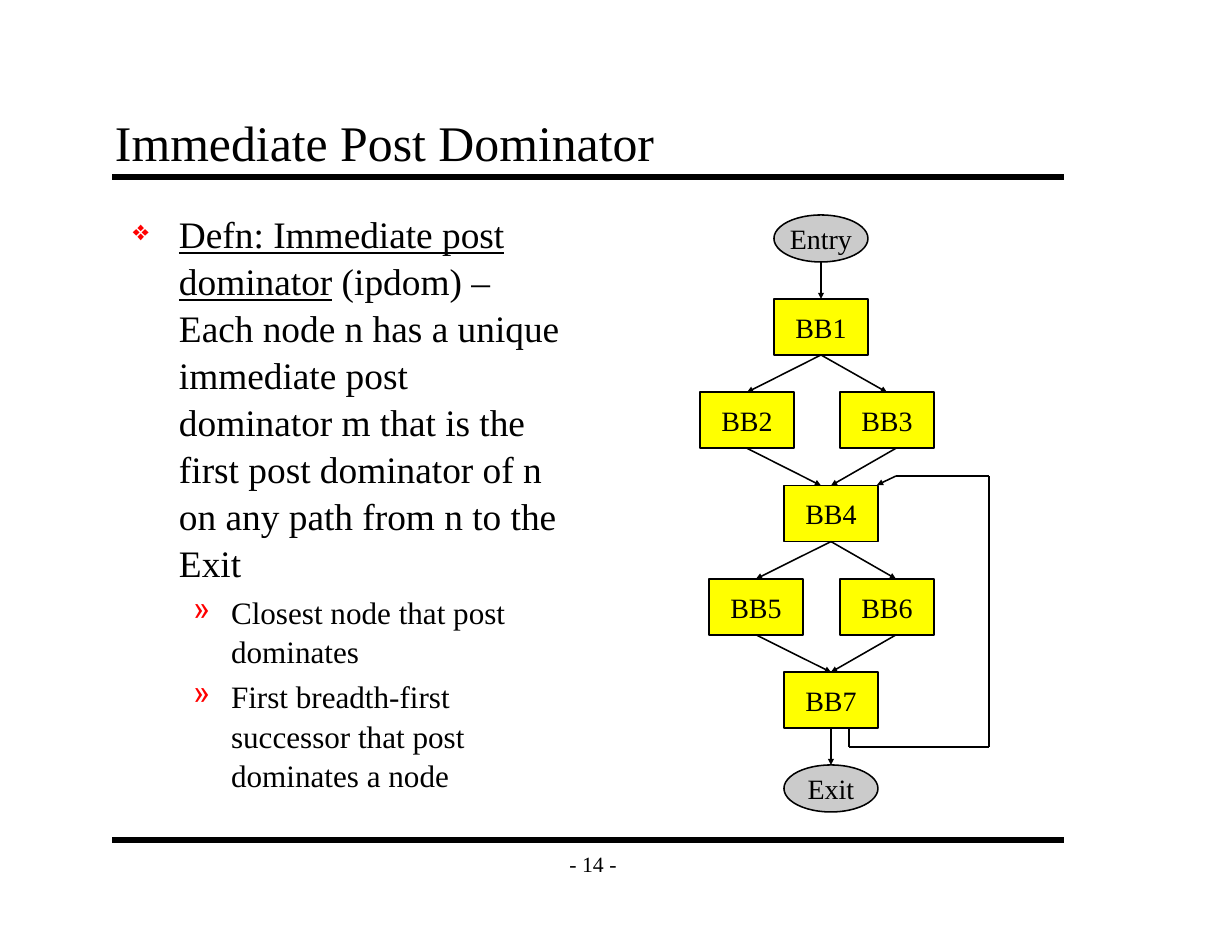
"""Build the slide on immediate post dominators with its control flow graph."""
import itertools

import lxml.etree
import pptx
import pptx.dml.color
import pptx.enum.shapes
import pptx.enum.text
import pptx.oxml.ns
import pptx.util

SCALE = 914400 / 112
FONT = "Times New Roman"
BLACK, RED, YELLOW, GREY = "000000", "FF0000", "FFFF00", "CBCBCB"
Align = pptx.enum.text.PP_ALIGN
Anchor = pptx.enum.text.MSO_ANCHOR
Shape = pptx.enum.shapes.MSO_SHAPE

TITLE = "Immediate Post Dominator"
PAGE_NUMBER = "- 14 -"
BODY = [
    {"runs": [("Defn: Immediate post dominator", True),
              (" (ipdom) – Each node n has a unique immediate post dominator m "
               "that is the first post dominator of n on any path from n to the Exit", False)],
     "size": 24, "left": 46, "hang": 46, "bullet": "❖", "bullet_size": 75},
    {"runs": [("Closest node that post dominates", False)],
     "size": 20, "left": 98, "hang": 38, "bullet": "»", "bullet_size": 100},
    {"runs": [("First breadth-first successor that post dominates a node", False)],
     "size": 20, "left": 98, "hang": 38, "bullet": "»", "bullet_size": 100},
]

NODE_WIDTH, BLOCK_HEIGHT, OVAL_HEIGHT = 94, 56, 47
OVALS = {"Entry": (821, 215), "Exit": (831, 765)}
BLOCK_ROWS = [
    [("BB1", 821)],
    [("BB2", 747), ("BB3", 887)],
    [("BB4", 831)],
    [("BB5", 756), ("BB6", 887)],
    [("BB7", 831)],
]
FIRST_ROW, ROW_STEP = 299, 93.3
EDGES = [
    ("Entry", "BB1", 0, 0), ("BB1", "BB2", 0, 0), ("BB1", "BB3", 0, 0),
    ("BB2", "BB4", 0, -10), ("BB3", "BB4", 9, 0), ("BB4", "BB5", 0, 0),
    ("BB4", "BB6", 0, 9), ("BB5", "BB7", 0, 0), ("BB6", "BB7", 9, 0),
    ("BB7", "Exit", 0, 0),
]
BACK_EDGE = [(849, 728), (849, 747), (989, 747), (989, 476), (896, 476), (877, 485)]
RULES = [177, 840]


def px(length):
    return pptx.util.Emu(round(length * SCALE))


def color(value):
    return pptx.dml.color.RGBColor.from_string(value)


def add_xml(parent, tag, **attributes):
    return lxml.etree.SubElement(parent, pptx.oxml.ns.qn(tag), attributes)


def style_font(paragraph, size):
    paragraph.font.name = FONT
    paragraph.font.size = pptx.util.Pt(size)
    paragraph.font.color.rgb = color(BLACK)


def add_line(slide, start, end, width=1, arrow=False):
    line = slide.shapes.add_connector(
        pptx.enum.shapes.MSO_CONNECTOR.STRAIGHT, *map(px, (*start, *end)))
    line.line.color.rgb = color(BLACK)
    line.line.width = pptx.util.Pt(width)
    if arrow:
        add_xml(line.line._get_or_add_ln(), "a:tailEnd", type="triangle", w="sm", len="sm")
    add_xml(line._element.spPr, "a:effectLst")


def add_text_box(slide, box, anchor, wrap=True):
    frame = slide.shapes.add_textbox(*map(px, box)).text_frame
    frame.word_wrap = wrap
    frame.vertical_anchor = anchor
    frame.margin_left = frame.margin_right = px(12)
    frame.margin_top = frame.margin_bottom = px(7)
    return frame


def add_label(frame, text, size, align):
    paragraph = frame.paragraphs[0]
    paragraph.text = text
    paragraph.alignment = align
    style_font(paragraph, size)


def add_body(slide):
    frame = add_text_box(slide, (121, 202, 461, 638), Anchor.TOP)
    for index, item in enumerate(BODY):
        paragraph = frame.add_paragraph() if index else frame.paragraphs[0]
        for text, underline in item["runs"]:
            run = paragraph.add_run()
            run.text = text
            run.font.underline = underline
        paragraph.line_spacing = 1.05
        paragraph.space_before = pptx.util.Pt(item["size"] * 0.2)
        properties = paragraph._p.get_or_add_pPr()
        properties.set("marL", str(px(item["left"])))
        properties.set("indent", str(-px(item["hang"])))
        add_xml(add_xml(properties, "a:buClr"), "a:srgbClr", val=RED)
        add_xml(properties, "a:buSzPct", val=str(item["bullet_size"] * 1000))
        add_xml(properties, "a:buChar", char=item["bullet"])
        style_font(paragraph, item["size"])


def add_node(slide, name, center, top, height, kind, fill):
    node = slide.shapes.add_shape(
        kind, *map(px, (center - NODE_WIDTH / 2, top, NODE_WIDTH, height)))
    node.shadow.inherit = False
    node.fill.solid()
    node.fill.fore_color.rgb = color(fill)
    node.line.color.rgb = color(BLACK)
    node.line.width = pptx.util.Pt(1)
    node.text_frame.word_wrap = False
    node.text_frame.vertical_anchor = Anchor.MIDDLE
    add_label(node.text_frame, name, 18, Align.CENTER)
    return center, top, top + height


def add_graph(slide):
    nodes = {}
    for name, (center, top) in OVALS.items():
        nodes[name] = add_node(slide, name, center, top, OVAL_HEIGHT, Shape.OVAL, GREY)
    for row, blocks in enumerate(BLOCK_ROWS):
        for name, center in blocks:
            nodes[name] = add_node(slide, name, center, FIRST_ROW + row * ROW_STEP,
                                   BLOCK_HEIGHT, Shape.RECTANGLE, YELLOW)
    for source, target, start_shift, end_shift in EDGES:
        start_x, _, bottom = nodes[source]
        end_x, top, _ = nodes[target]
        add_line(slide, (start_x + start_shift, bottom), (end_x + end_shift, top), arrow=True)
    for start, end in itertools.pairwise(BACK_EDGE):
        add_line(slide, start, end, arrow=end == BACK_EDGE[-1])


def main():
    presentation = pptx.Presentation()
    presentation.slide_width, presentation.slide_height = px(1232), px(952)
    slide = presentation.slides.add_slide(presentation.slide_layouts[6])
    for y in RULES:
        add_line(slide, (112, y), (1064, y), width=4)
    add_label(add_text_box(slide, (551, 840, 84, 47), Anchor.MIDDLE, wrap=False),
              PAGE_NUMBER, 14, Align.CENTER)
    add_label(add_text_box(slide, (103, 103, 952, 75), Anchor.BOTTOM),
              TITLE, 32, Align.LEFT)
    add_body(slide)
    add_graph(slide)
    presentation.save("out.pptx")


if __name__ == "__main__":
    main()
